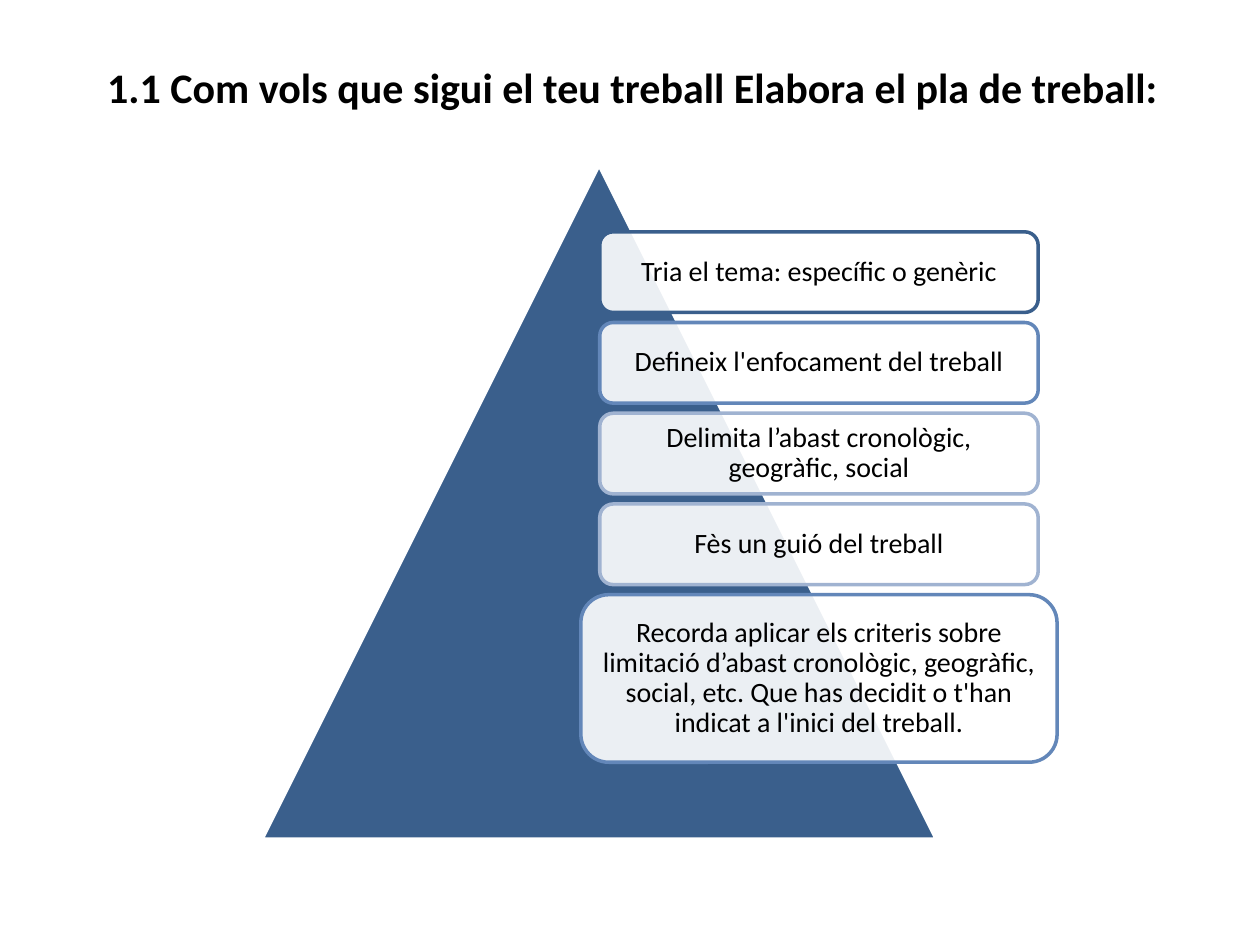
from dataclasses import dataclass

from lxml.etree import SubElement
from pptx import Presentation
from pptx.dml.color import RGBColor
from pptx.enum.shapes import MSO_SHAPE as Shape
from pptx.enum.text import MSO_ANCHOR as Anchor, MSO_AUTO_SIZE as AutoSize, PP_ALIGN as Align
from pptx.oxml.ns import qn
from pptx.util import Inches, Pt


@dataclass(frozen=True)
class Theme:
    font: str = "Calibri"
    title_size: int = 24
    step_size: int = 16
    outline: int = 2
    ink: str = "000000"
    paper: str = "FFFFFF"
    navy: str = "3A5F8C"
    blue: str = "6387B9"
    pale: str = "A0B3D1"
    step_opacity: int = 90


THEME = Theme()

# Stack of steps: shared centre line, first top and gap, in inches
STACK_CENTRE, STACK_TOP, STACK_GAP = 6.5, 1.84, 0.08
SMALL, LARGE = (3.48, 0.64), (3.78, 1.33)

STEPS = [
    ("Tria el tema: específic o genèric", SMALL, THEME.navy),
    ("Defineix l'enfocament del treball", SMALL, THEME.blue),
    ("Delimita l’abast cronològic, geogràfic, social", SMALL, THEME.pale),
    ("Fès un guió del treball", SMALL, THEME.pale),
    ("Recorda aplicar els criteris sobre limitació d’abast cronològic, "
     "geogràfic, social, etc. Que has decidit o t'han indicat a l'inici "
     "del treball.", LARGE, THEME.blue),
]


def write_text(frame, text, size, align, bold=False):
    frame.text = text
    frame.word_wrap = True
    paragraph = frame.paragraphs[0]
    paragraph.alignment = align
    font = paragraph.runs[0].font
    font.name, font.size, font.bold = THEME.font, Pt(size), bold
    font.color.rgb = RGBColor.from_string(THEME.ink)
    return paragraph


def add_title(slide, text):
    title = slide.shapes.title
    title.left, title.top = Inches(0.75), Inches(0.44)
    title.width, title.height = Inches(8.74), Inches(0.5)
    frame = title.text_frame
    write_text(frame, text, THEME.title_size, Align.LEFT, bold=True)
    frame.vertical_anchor = Anchor.TOP
    frame.auto_size = AutoSize.SHAPE_TO_FIT_TEXT


def add_panel(slide, kind, left, top, width, height, fill, line):
    panel = slide.shapes.add_shape(
        kind, Inches(left), Inches(top), Inches(width), Inches(height))
    panel.shadow.inherit = False
    panel.fill.solid()
    panel.fill.fore_color.rgb = RGBColor.from_string(fill)
    panel.line.color.rgb = RGBColor.from_string(line)
    panel.line.width = Pt(THEME.outline)
    return panel


def set_opacity(shape, percent):
    color = shape.fill._xPr.find(qn("a:solidFill"))[0]
    SubElement(color, qn("a:alpha")).set("val", str(percent * 1000))


def add_step(slide, text, top, size, line):
    width, height = size
    step = add_panel(slide, Shape.ROUNDED_RECTANGLE, STACK_CENTRE - width / 2,
                     top, width, height, THEME.paper, line)
    set_opacity(step, THEME.step_opacity)
    frame = step.text_frame
    frame.margin_left = frame.margin_right = Inches(0.07)
    frame.margin_top = frame.margin_bottom = Inches(0.07)
    frame.vertical_anchor = Anchor.MIDDLE
    write_text(frame, text, THEME.step_size, Align.CENTER).line_spacing = 0.9


def main():
    deck = Presentation()
    deck.slide_width, deck.slide_height = Inches(10), Inches(7.5)
    slide = deck.slides.add_slide(deck.slide_layouts[5])

    # Heading
    add_title(slide, "1.1 Com vols que sigui el teu treball Elabora el pla de treball:")

    # Pyramid behind the steps
    add_panel(slide, Shape.ISOSCELES_TRIANGLE, 2.08, 1.31, 5.35, 5.35,
              THEME.navy, THEME.paper)

    # Steps, stacked from the top down
    top = STACK_TOP
    for text, size, line in STEPS:
        add_step(slide, text, top, size, line)
        top += size[1] + STACK_GAP

    deck.save("out.pptx")


if __name__ == "__main__":
    main()
